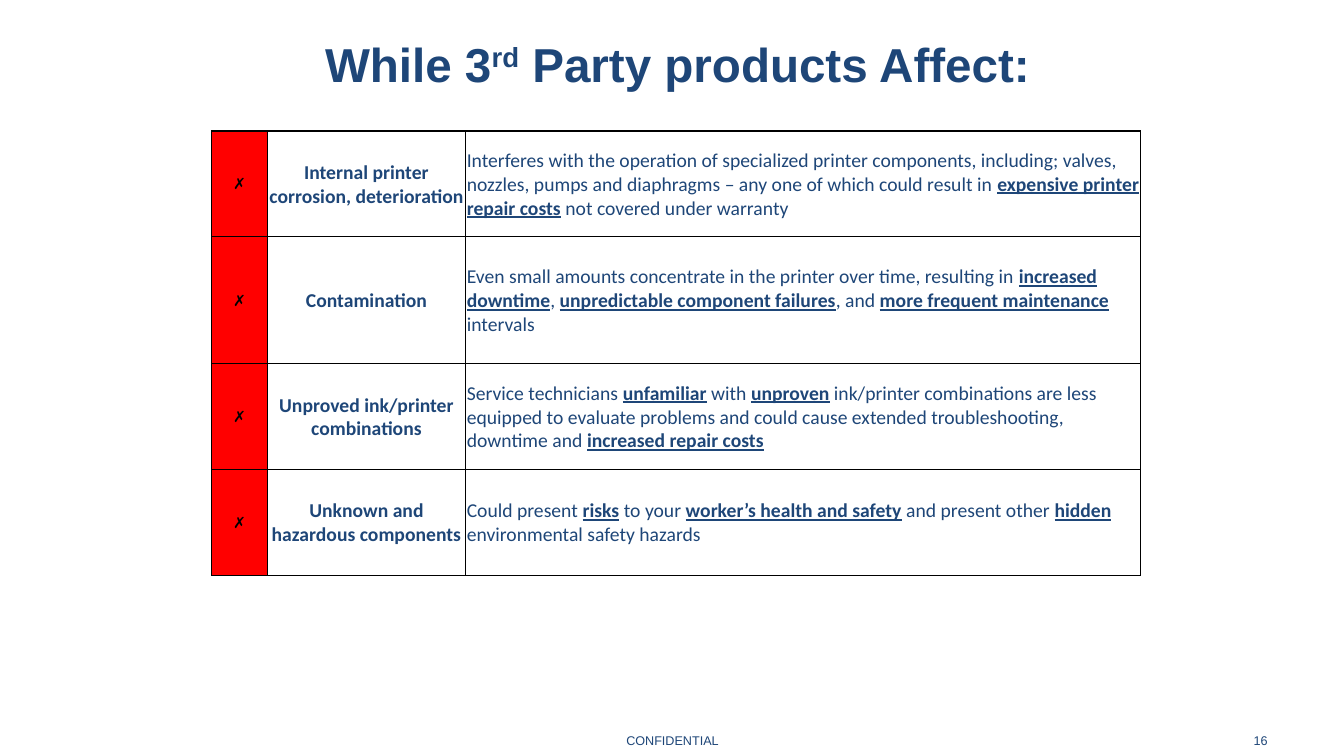
from lxml.etree import SubElement
from pptx import Presentation
from pptx.dml.color import RGBColor
from pptx.enum.text import MSO_ANCHOR as Anchor, PP_ALIGN as Align
from pptx.oxml.ns import qn
from pptx.util import Inches, Pt

NAVY, BLACK, RED = "1E4678", "000000", "FF0000"
TITLE = ["While 3", "rd", " Party products Affect:"]
FOOTERS = [("CONFIDENTIAL", 4.56, 4.22, Align.CENTER), ("16", 9.56, 3.11, Align.RIGHT)]
MARK = "✗"
EFFECTS = [
    ("Internal printer corrosion, deterioration",
     "Interferes with the operation of specialized printer components, including; valves, "
     "nozzles, pumps and diaphragms – any one of which could result in "
     "*expensive printer repair costs* not covered under warranty"),
    ("Contamination",
     "Even small amounts concentrate in the printer over time, resulting in "
     "*increased downtime*, *unpredictable component failures*, and "
     "*more frequent maintenance* intervals"),
    ("Unproved ink/printer combinations",
     "Service technicians *unfamiliar* with *unproven* ink/printer combinations are less "
     "equipped to evaluate problems and could cause extended troubleshooting, "
     "downtime and *increased repair costs*"),
    ("Unknown and hazardous components",
     "Could present *risks* to your *worker’s health and safety* and present other "
     "*hidden* environmental safety hazards"),
]
COLUMN_WIDTHS = [0.55, 1.97, 6.69]
ROW_HEIGHTS = [1.05, 1.26, 1.05, 1.05]


def color(value):
    return RGBColor.from_string(value)


def add_run(paragraph, text, font_name, size, ink=NAVY, bold=False, underline=False):
    run = paragraph.add_run()
    run.text = text
    font = run.font
    font.name, font.size, font.bold = font_name, Pt(size), bold
    font.underline = underline
    font.color.rgb = color(ink)
    return run


def add_text_box(slide, left, top, width, height, align):
    frame = slide.shapes.add_textbox(
        Inches(left), Inches(top), Inches(width), Inches(height)).text_frame
    frame.word_wrap = True
    frame.vertical_anchor = Anchor.MIDDLE
    frame.margin_top = frame.margin_bottom = 0
    paragraph = frame.paragraphs[0]
    paragraph.alignment = align
    return paragraph


def add_borders(cell):
    properties = cell._tc.get_or_add_tcPr()
    for index, side in enumerate(("lnL", "lnR", "lnT", "lnB")):
        line = properties.makeelement(qn(f"a:{side}"), {"w": str(Pt(1))})
        SubElement(SubElement(line, qn("a:solidFill")), qn("a:srgbClr"), val=BLACK)
        properties.insert(index, line)


def prepare_cell(cell, align, fill=None):
    cell.margin_left = cell.margin_right = cell.margin_top = Inches(0.01)
    cell.margin_bottom = 0
    cell.vertical_anchor = Anchor.MIDDLE
    if fill:
        cell.fill.solid()
        cell.fill.fore_color.rgb = color(fill)
    else:
        cell.fill.background()
    add_borders(cell)
    paragraph = cell.text_frame.paragraphs[0]
    paragraph.alignment = align
    return paragraph


def add_effects_table(slide):
    table = slide.shapes.add_table(
        len(EFFECTS), len(COLUMN_WIDTHS), Inches(2.1), Inches(1.3),
        Inches(sum(COLUMN_WIDTHS)), Inches(sum(ROW_HEIGHTS))).table
    table.first_row = table.horz_banding = False
    for column, width in zip(table.columns, COLUMN_WIDTHS):
        column.width = Inches(width)
    for row, height, (effect, detail) in zip(table.rows, ROW_HEIGHTS, EFFECTS):
        row.height = Inches(height)
        mark_cell, effect_cell, detail_cell = row.cells
        add_run(prepare_cell(mark_cell, Align.CENTER, RED), MARK, "Arial", 11, BLACK, True)
        add_run(prepare_cell(effect_cell, Align.CENTER), effect, "Calibri", 14, bold=True)
        paragraph = prepare_cell(detail_cell, Align.LEFT)
        for index, part in enumerate(detail.split("*")):
            strong = index % 2 == 1
            if part:
                add_run(paragraph, part, "Calibri", 14, bold=strong, underline=strong)


def main():
    presentation = Presentation()
    presentation.slide_width, presentation.slide_height = Inches(13.33), Inches(7.5)
    slide = presentation.slides.add_slide(presentation.slide_layouts[6])
    title = add_text_box(slide, 1.94, 0, 9.56, 1.25, Align.CENTER)
    runs = [add_run(title, text, "Arial", 34, bold=True) for text in TITLE]
    runs[1].font._element.set("baseline", "30000")
    for text, left, width, align in FOOTERS:
        add_run(add_text_box(slide, left, 7.24, width, 0.21, align), text, "Arial", 9)
    add_effects_table(slide)
    presentation.save("out.pptx")


if __name__ == "__main__":
    main()
